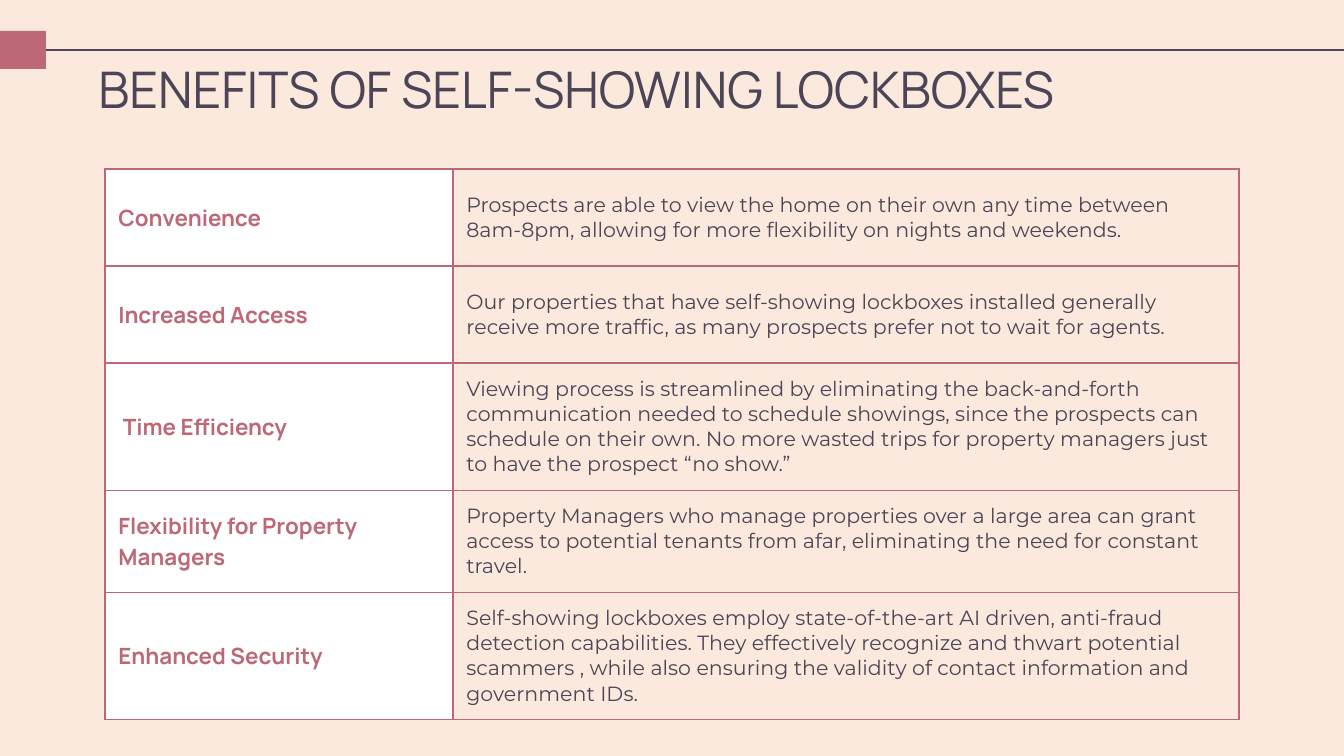
from dataclasses import dataclass

from lxml.etree import SubElement
from pptx import Presentation
from pptx.dml.color import RGBColor
from pptx.enum.shapes import MSO_CONNECTOR, MSO_SHAPE
from pptx.enum.text import MSO_ANCHOR, MSO_AUTO_SIZE, PP_ALIGN
from pptx.oxml import parse_xml
from pptx.oxml.ns import nsdecls, qn
from pptx.util import Emu, Inches, Pt

SCALE = Inches(10) / 1344


@dataclass(frozen=True)
class Theme:
    cream: str = "FAE9DC"
    white: str = "FFFFFF"
    rose: str = "BD6877"
    plum: str = "4C4557"
    heading_font: str = "Manrope"
    body_font: str = "Montserrat"
    title_size: int = 27
    label_size: int = 12
    body_size: int = 11
    line_width: float = 0.75


THEME = Theme()

TITLE = {"name": THEME.heading_font, "size": Pt(THEME.title_size), "bold": False}
LABEL = {"name": THEME.heading_font, "size": Pt(THEME.label_size), "bold": True}
BODY = {"name": THEME.body_font, "size": Pt(THEME.body_size), "bold": False}

BENEFITS = [
    ("Convenience",
     "Prospects are able to view the home on their own any time between "
     "8am-8pm, allowing for more flexibility on nights and weekends."),
    ("Increased Access",
     "Our properties that have self-showing lockboxes installed generally "
     "receive more traffic, as many prospects prefer not to wait for agents."),
    (" Time Efficiency",
     "Viewing process is streamlined by eliminating the back-and-forth "
     "communication needed to schedule showings, since the prospects can "
     "schedule on their own. No more wasted trips for property managers just "
     "to have the prospect “no show.”"),
    ("Flexibility for Property Managers",
     "Property Managers who manage properties over a large area can grant "
     "access to potential tenants from afar, eliminating the need for constant "
     "travel."),
    ("Enhanced Security",
     "Self-showing lockboxes employ state-of-the-art AI driven, anti-fraud "
     "detection capabilities. They effectively recognize and thwart potential "
     "scammers , while also ensuring the validity of contact information and "
     "government IDs."),
]


def px(n):
    return Emu(round(n * SCALE))


def rgb(color):
    return RGBColor.from_string(color)


def apply(obj, values):
    for name, value in values.items():
        setattr(obj, name, value)


def set_margins(obj):
    for side in ("left", "top", "right", "bottom"):
        setattr(obj, f"margin_{side}", Inches(0.1))


def set_fill(obj, color):
    obj.fill.solid()
    obj.fill.fore_color.rgb = rgb(color)


def write(tf, text, font, color):
    p = tf.paragraphs[0]
    p.alignment = PP_ALIGN.LEFT
    r = p.add_run()
    r.text = text
    apply(r.font, font)
    r.font.color.rgb = rgb(color)
    return p


def add_title(s, text):
    sp = s.shapes.title
    apply(sp, {"left": px(85), "top": px(51), "width": px(1153), "height": px(84)})
    tf = sp.text_frame
    apply(tf, {"word_wrap": True, "auto_size": MSO_AUTO_SIZE.NONE,
               "vertical_anchor": MSO_ANCHOR.TOP})
    set_margins(tf)
    p = write(tf, text, TITLE, THEME.plum)
    p.line_spacing = 0.9


def add_rule(s, y, width):
    line = s.shapes.add_connector(MSO_CONNECTOR.STRAIGHT, 0, px(y), px(width), px(y))
    line.line.color.rgb = rgb(THEME.plum)
    line.line.width = Pt(THEME.line_width)
    SubElement(line._element.spPr, qn("a:effectLst"))


def add_block(s, x, y, w, h):
    sp = s.shapes.add_shape(MSO_SHAPE.RECTANGLE, px(x), px(y), px(w), px(h))
    sp.shadow.inherit = False
    set_fill(sp, THEME.rose)
    sp.line.fill.background()


def set_borders(cell):
    tcPr = cell._tc.get_or_add_tcPr()
    for side in ("lnL", "lnR", "lnT", "lnB"):
        tcPr.append(parse_xml(
            f'<a:{side} {nsdecls("a")} w="{Pt(THEME.line_width)}"><a:solidFill>'
            f'<a:srgbClr val="{THEME.rose}"/></a:solidFill></a:{side}>'))


def fill_cell(cell, text, font, color, fill):
    set_borders(cell)
    set_fill(cell, fill)
    set_margins(cell)
    cell.vertical_anchor = MSO_ANCHOR.MIDDLE
    return write(cell.text_frame, text, font, color)


def add_benefits_table(s, x, y, widths, row_height):
    rows = len(BENEFITS)
    table = s.shapes.add_table(rows, len(widths), px(x), px(y),
                               px(sum(widths)), px(row_height * rows)).table
    apply(table, {"first_row": False, "horz_banding": False})
    for column, width in zip(table.columns, widths):
        column.width = px(width)
    for i, (label, detail) in enumerate(BENEFITS):
        table.rows[i].height = px(row_height)
        fill_cell(table.cell(i, 0), label, LABEL, THEME.rose, THEME.white)
        p = fill_cell(table.cell(i, 1), detail, BODY, THEME.plum, THEME.cream)
        p.space_after = Pt(16)


def main():
    prs = Presentation()
    apply(prs, {"slide_width": px(1344), "slide_height": px(756)})
    s = prs.slides.add_slide(prs.slide_layouts[5])
    set_fill(s.background, THEME.cream)
    add_benefits_table(s, 105, 169, (348, 786), 97)
    add_title(s, "BENEFITS OF SELF-SHOWING LOCKBOXES")
    add_rule(s, 50, 1344)
    add_block(s, 0, 31, 46, 38)
    prs.save("out.pptx")


if __name__ == "__main__":
    main()
